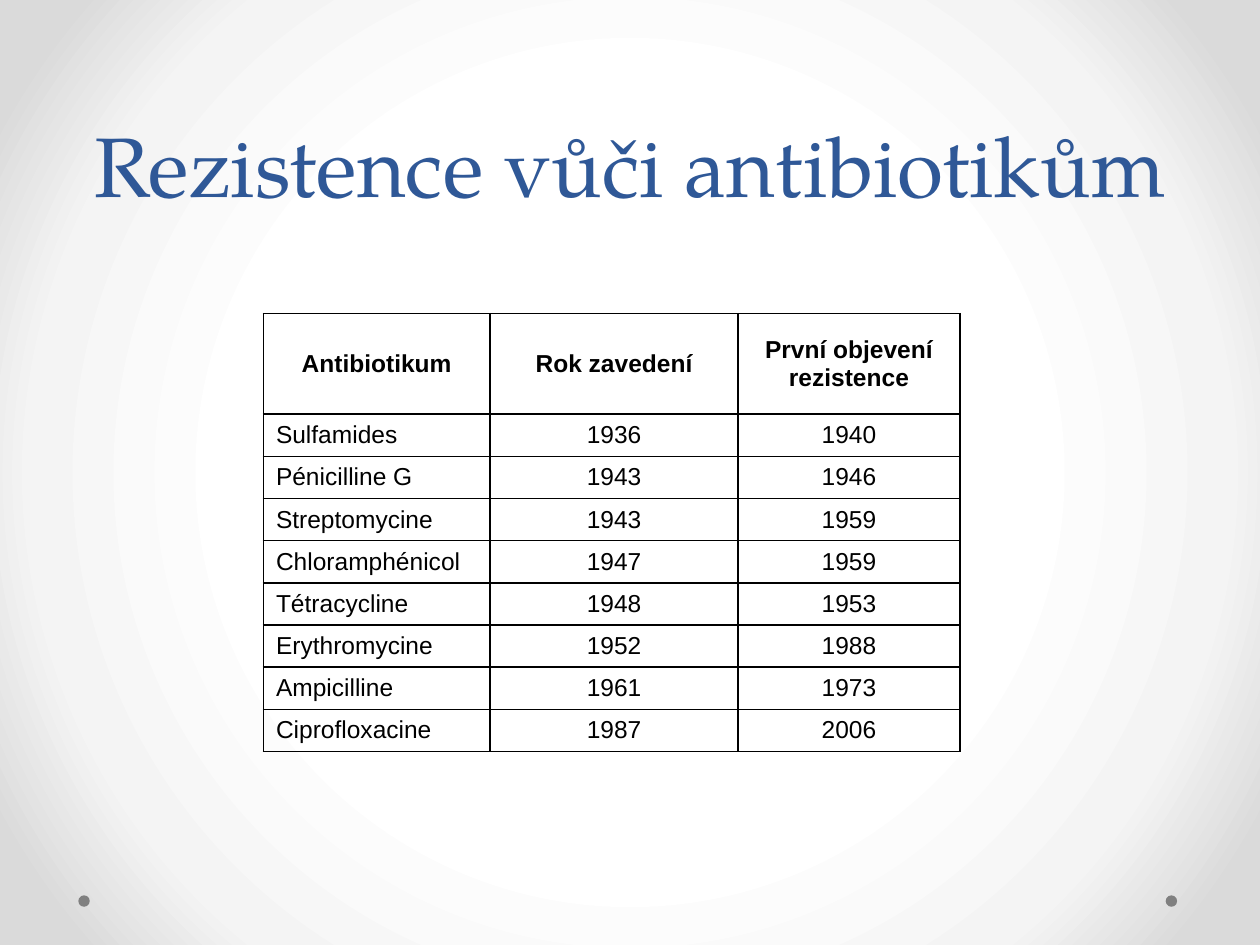
"""Build a slide with a table of antibiotics and the onset of resistance."""
from dataclasses import dataclass

from lxml import etree
from pptx import Presentation
from pptx import util as u
from pptx.dml.color import RGBColor
from pptx.enum import shapes, text
from pptx.oxml import ns


@dataclass(frozen=True)
class Theme:
    """Colours, fonts and type sizes of the slide."""
    title_color: str = "2F5897"
    ink: str = "000000"
    dot_color: str = "808080"
    backdrop: tuple = ((0, "FFFFFF"), (50, "FFFFFF"), (76, "F4F4F4"), (92, "DADADA"), (100, "DADADA"))
    title_font: str = "TeX Gyre Pagella"
    table_font: str = "Arial"
    title_size: int = 48
    title_leading: int = 58
    table_size: int = 14
    border: int = 1


class SlideBuilder:
    """Draws each kind of element on the current page."""

    def __init__(self, page, theme):
        """Keep the page and its theme."""
        self.page = page
        self.theme = theme

    def background(self):
        """Fill the page with a circular gradient."""
        self.page.background.fill.solid()
        holder = self.page.element.find(".//" + ns.qn("p:bgPr"))
        gradient = etree.Element(ns.qn("a:gradFill"), rotWithShape="1")
        stops = etree.SubElement(gradient, ns.qn("a:gsLst"))
        for position, color in self.theme.backdrop:
            stop = etree.SubElement(stops, ns.qn("a:gs"), pos=str(position * 1000))
            etree.SubElement(stop, ns.qn("a:srgbClr"), val=color)
        circle = etree.SubElement(gradient, ns.qn("a:path"), path="circle")
        etree.SubElement(circle, ns.qn("a:fillToRect"), {side: "50000" for side in "ltrb"})
        holder.replace(holder[0], gradient)

    def add_span(self, para, words, font, size, color, bold=False):
        """Add one formatted run to a paragraph."""
        span = para.add_run()
        span.text = words
        span.font.name = font
        span.font.size = u.Pt(size)
        span.font.bold = bold
        span.font.color.rgb = RGBColor.from_string(color)

    def title(self, words, left, top, width, height):
        """Place the title in its placeholder."""
        theme = self.theme
        box = self.page.shapes.title
        box.left, box.top, box.width, box.height = map(u.Cm, (left, top, width, height))
        frame = box.text_frame
        frame.auto_size = text.MSO_AUTO_SIZE.NONE
        frame.vertical_anchor = text.MSO_ANCHOR.BOTTOM
        para = frame.paragraphs[0]
        para.alignment = text.PP_ALIGN.CENTER
        para.line_spacing = u.Pt(theme.title_leading)
        self.add_span(para, words, theme.title_font, theme.title_size, theme.title_color)

    def dot(self, left, top, size):
        """Draw a small round ornament."""
        shape = self.page.shapes.add_shape(
            shapes.MSO_SHAPE.OVAL, u.Cm(left), u.Cm(top), u.Cm(size), u.Cm(size))
        shape.shadow.inherit = False
        shape.fill.solid()
        shape.fill.fore_color.rgb = RGBColor.from_string(self.theme.dot_color)
        shape.line.fill.background()

    def cell(self, cell, words, align, bold):
        """Fill one table cell with text and draw its borders."""
        theme = self.theme
        properties = cell._tc.get_or_add_tcPr()
        for side in ("lnL", "lnR", "lnT", "lnB"):
            line = etree.SubElement(properties, ns.qn("a:" + side), w=str(u.Pt(theme.border)))
            paint = etree.SubElement(line, ns.qn("a:solidFill"))
            etree.SubElement(paint, ns.qn("a:srgbClr"), val=theme.ink)
        cell.fill.background()
        cell.vertical_anchor = text.MSO_ANCHOR.MIDDLE
        para = cell.text_frame.paragraphs[0]
        para.alignment = align
        self.add_span(para, words, theme.table_font, theme.table_size, theme.ink, bold)

    def table(self, rows, left, top, widths, head_height, row_height):
        """Add a ruled table whose first row is the header."""
        heights = [head_height] + [row_height] * (len(rows) - 1)
        table = self.page.shapes.add_table(
            len(rows), len(widths), u.Cm(left), u.Cm(top),
            u.Cm(sum(widths)), u.Cm(sum(heights))).table
        table.first_row = table.horz_banding = False
        for column, width in zip(table.columns, widths):
            column.width = u.Cm(width)
        for index, (row, height) in enumerate(zip(rows, heights)):
            table.rows[index].height = u.Cm(height)
            header = index == 0
            for place, words in enumerate(row):
                centred = header or place > 0
                align = text.PP_ALIGN.CENTER if centred else text.PP_ALIGN.LEFT
                self.cell(table.cell(index, place), words, align, header)


RESISTANCE = (
    ("Antibiotikum", "Rok zavedení", "První objevení rezistence"),
    ("Sulfamides", "1936", "1940"),
    ("Pénicilline G", "1943", "1946"),
    ("Streptomycine", "1943", "1959"),
    ("Chloramphénicol", "1947", "1959"),
    ("Tétracycline", "1948", "1953"),
    ("Erythromycine", "1952", "1988"),
    ("Ampicilline", "1961", "1973"),
    ("Ciprofloxacine", "1987", "2006"),
)


def main():
    """Build and save the deck."""
    deck = Presentation()
    deck.slide_width, deck.slide_height = u.Cm(25.4), u.Cm(19.05)
    page = deck.slides.add_slide(deck.slide_layouts.get_by_name("Title Only"))
    builder = SlideBuilder(page, Theme())
    builder.background()
    for left in (23.5, 1.58):
        builder.dot(left, 18.05, 0.23)
    builder.title("Rezistence vůči antibiotikům", 1.27, 0.91, 22.86, 3.53)
    builder.table(RESISTANCE, 5.31, 6.32, (4.57, 5, 4.47), 2.03, 0.85)
    deck.save("out.pptx")


if __name__ == "__main__":
    main()
